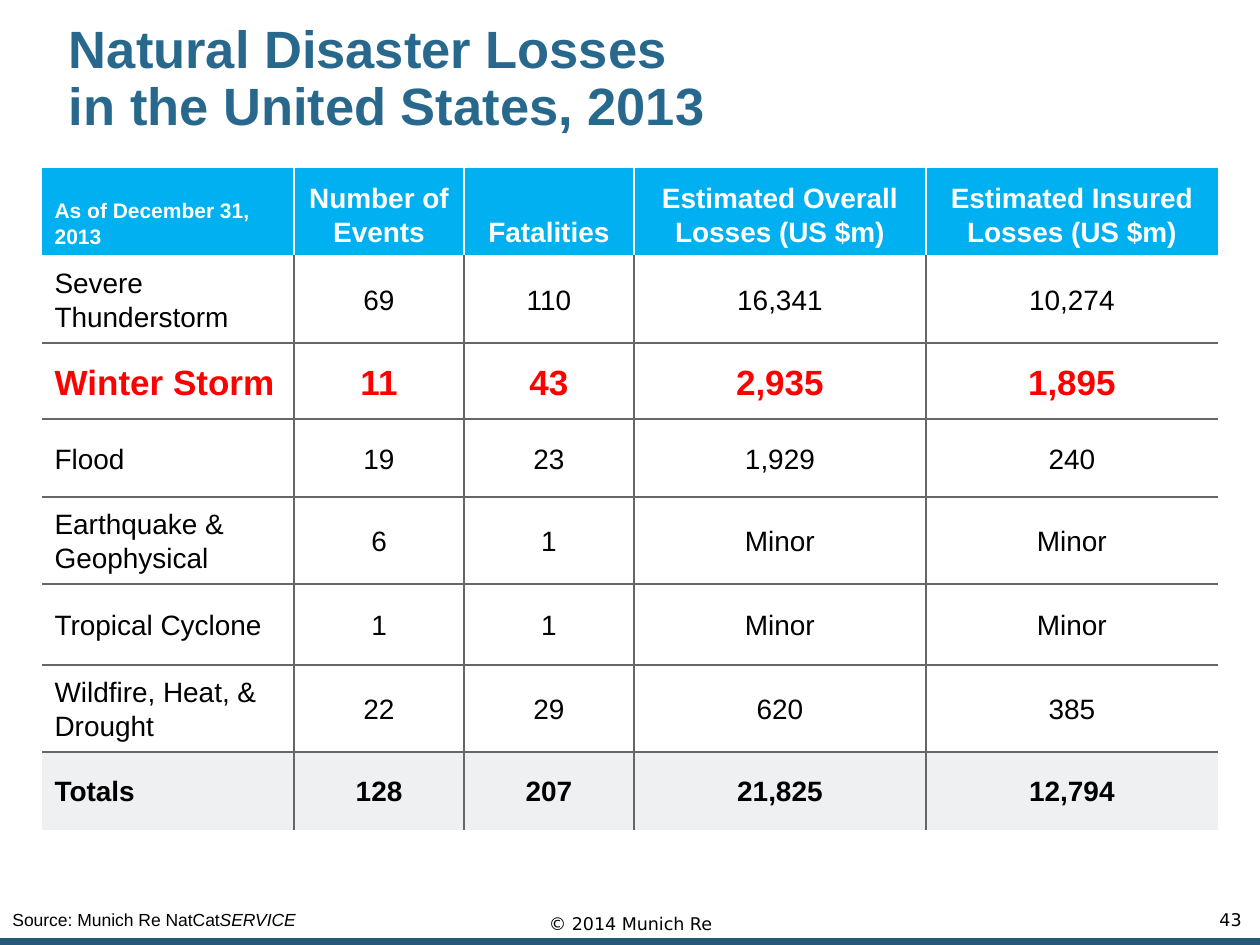
from dataclasses import dataclass

from lxml.etree import SubElement
from pptx import Presentation
from pptx.dml.color import RGBColor as Color
from pptx.enum.shapes import MSO_SHAPE as Shape
from pptx.enum.text import MSO_ANCHOR as Anchor, PP_ALIGN as Align
from pptx.oxml.ns import qn
from pptx.util import Emu, Pt

EMU_PER_PX = 914400 / 126


def px(length):
    return Emu(round(length * EMU_PER_PX))


@dataclass(frozen=True)
class Theme:
    # Colours
    title: str = "28688C"
    bar: str = "225A7A"
    header: str = "00B0F0"
    totals: str = "EEF0F2"
    highlight: str = "FF0000"
    rule: str = "666666"
    text: str = "000000"
    white: str = "FFFFFF"
    # Type
    font: str = "Arial"
    footer_font: str = "DejaVu Sans"
    title_size: int = 30
    highlight_size: int = 20
    body_size: int = 16
    note_size: int = 12
    footer_size: int = 10


class SlideBuilder:
    def __init__(self, page, theme):
        self.page = page
        self.theme = theme

    def style(self, para, size, color, bold=False, align=Align.LEFT, font=None, spacing=None):
        para.alignment = align
        para.line_spacing = spacing
        para.font.name = font or self.theme.font
        para.font.size = Pt(size)
        para.font.bold = bold
        para.font.color.rgb = Color.from_string(color)

    def bar(self, left, top, width, height):
        bar = self.page.shapes.add_shape(Shape.RECTANGLE, px(left), px(top), px(width), px(height))
        bar.shadow.inherit = False
        bar.fill.solid()
        bar.fill.fore_color.rgb = Color.from_string(self.theme.bar)
        bar.line.fill.background()

    def text(self, frame, spans, size, color, inset=None, **look):
        """Add a text box; spans are (text, italic) pairs."""
        box = self.page.shapes.add_textbox(*map(px, frame)).text_frame
        box.word_wrap = True
        box.vertical_anchor = Anchor.MIDDLE
        if inset is not None:
            box.margin_left = box.margin_right = px(inset)
        para = box.paragraphs[0]
        for words, italic in spans:
            span = para.add_run() if "\v" not in words else None
            if span is None:
                para.text = words
            else:
                span.text = words
                if italic:
                    span.font.italic = True
        self.style(para, size, color, **look)

    def border(self, cell, side, color):
        line = SubElement(cell._tc.get_or_add_tcPr(), qn(f"a:ln{side}"), w=str(Pt(1)))
        if color is None:
            SubElement(line, qn("a:noFill"))
        else:
            SubElement(SubElement(line, qn("a:solidFill")), qn("a:srgbClr"), val=color)

    def cell(self, cell, words, fill, borders, anchor, **look):
        for side, color in borders.items():
            self.border(cell, side, color)
        cell.fill.solid()
        cell.fill.fore_color.rgb = Color.from_string(fill)
        cell.vertical_anchor = anchor
        para = cell.text_frame.paragraphs[0]
        para.text = words
        self.style(para, spacing=1.1, **look)

    def table(self, left, top, widths, heights, rows):
        theme = self.theme
        table = self.page.shapes.add_table(
            len(rows), len(widths), px(left), px(top), px(sum(widths)), px(sum(heights))
        ).table
        table.first_row = table.horz_banding = False
        for column, width in zip(table.columns, widths):
            column.width = px(width)
        for row, height in zip(table.rows, heights):
            row.height = px(height)

        last_row, last_column = len(rows) - 1, len(widths) - 1
        for r, values in enumerate(rows):
            header, total = r == 0, r == last_row
            highlight = values[0] == "Winter Storm"
            upright = theme.white if header else theme.rule
            fill = theme.header if header else theme.totals if total else theme.white
            color = theme.white if header else theme.highlight if highlight else theme.text
            for c, words in enumerate(values):
                # Rules run between cells only, with none under the header
                borders = {
                    "L": upright if c > 0 else None,
                    "R": upright if c < last_column else None,
                    "T": theme.rule if r > 1 else None,
                    "B": theme.rule if 0 < r < last_row else None,
                }
                if header and c == 0:
                    size = theme.note_size
                else:
                    size = theme.highlight_size if highlight else theme.body_size
                self.cell(
                    table.cell(r, c), words, fill, borders,
                    Anchor.BOTTOM if header else Anchor.MIDDLE,
                    size=size, color=color, bold=header or total or highlight,
                    align=Align.CENTER if c else Align.LEFT,
                )


LOSSES = [
    ["As of December 31, 2013", "Number of Events", "Fatalities",
     "Estimated Overall Losses (US $m)", "Estimated Insured Losses (US $m)"],
    ["Severe\vThunderstorm", "69", "110", "16,341", "10,274"],
    ["Winter Storm", "11", "43", "2,935", "1,895"],
    ["Flood", "19", "23", "1,929", "240"],
    ["Earthquake & Geophysical", "6", "1", "Minor", "Minor"],
    ["Tropical Cyclone", "1", "1", "Minor", "Minor"],
    ["Wildfire, Heat, & Drought", "22", "29", "620", "385"],
    ["Totals", "128", "207", "21,825", "12,794"],
]


def main():
    deck = Presentation()
    deck.slide_width, deck.slide_height = px(1260), px(945)
    theme = Theme()
    slide = SlideBuilder(deck.slides.add_slide(deck.slide_layouts[6]), theme)

    # Bottom bar
    slide.bar(0, 938, 1260, 7)

    # Loss table
    slide.table(42, 168, [252, 170, 170, 292, 292], [87, 88, 76, 78, 87, 81, 87, 78], LOSSES)

    # Title
    slide.text((63, 30, 942, 100), [("Natural Disaster Losses\vin the United States, 2013", False)],
               theme.title_size, theme.title, inset=6, bold=True, spacing=0.9)

    # Footer
    slide.text((0, 903, 399, 34), [("Source: Munich Re NatCat", False), ("SERVICE", True)],
               theme.footer_size, theme.text)
    slide.text((1159, 903, 95, 34), [("43", False)], theme.footer_size, theme.text,
               align=Align.RIGHT, font=theme.footer_font)
    slide.text((368, 900, 525, 40), [("© 2014 Munich Re", False)], theme.footer_size, theme.text,
               align=Align.CENTER, font=theme.footer_font, spacing=1.3)

    deck.save("out.pptx")


if __name__ == "__main__":
    main()
